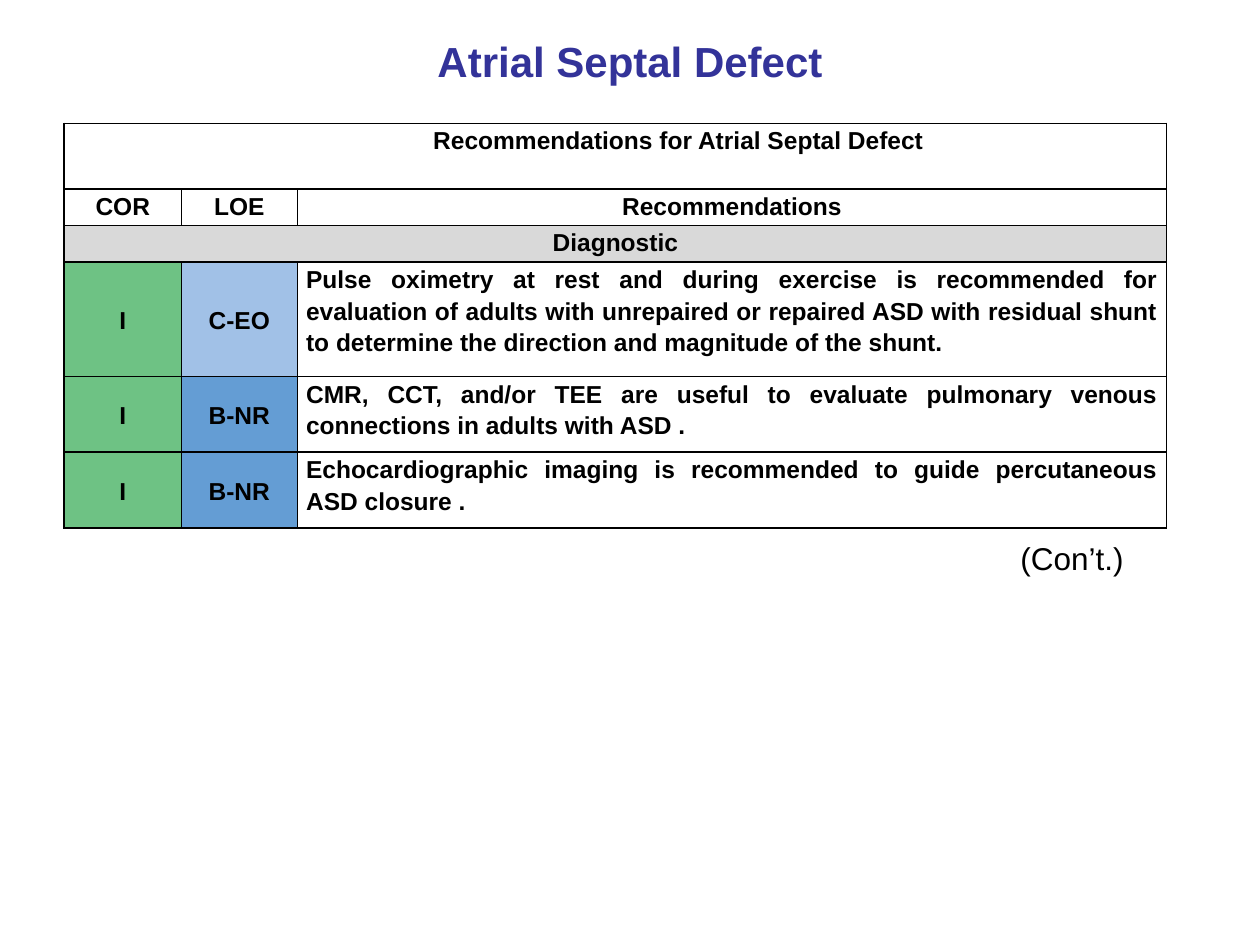
"""Build the atrial septal defect recommendations slide."""
from lxml import etree
from pptx import Presentation
from pptx import util as u
from pptx.dml.color import RGBColor
from pptx.enum import text
from pptx.oxml import ns

HUES = {"title": "333399", "ink": "000000", "band": "D9D9D9",
        "I": "6EC284", "C-EO": "A1C1E7", "B-NR": "649DD4"}
TITLE = "Atrial Septal Defect"
NOTE = "(Con’t.)"
ROWS = [
    ["Recommendations for Atrial Septal Defect"],
    ["COR", "LOE", "Recommendations"],
    ["Diagnostic"],
    ["I", "C-EO", "Pulse oximetry at rest and during exercise is recommended "
     "for evaluation of adults with unrepaired or repaired ASD with residual "
     "shunt to determine the direction and magnitude of the shunt."],
    ["I", "B-NR", "CMR, CCT, and/or TEE are useful to evaluate pulmonary "
     "venous connections in adults with ASD ."],
    ["I", "B-NR", "Echocardiographic imaging is recommended to guide "
     "percutaneous ASD closure ."],
]
WIDTHS = [0.93, 0.92, 6.9]
HEIGHTS = [0.52, 0.29, 0.29, 0.91, 0.6, 0.6]
HEAD, BAND, BODY = 0, 2, 3
PAD, INDENT = 0.07, 1.07
ALIGN = text.PP_ALIGN


def write(frame, words, size, hue="ink", bold=False, align=ALIGN.LEFT, gap=1):
    par = frame.paragraphs[0]
    par.alignment, par.line_spacing = align, gap
    run = par.add_run()
    run.text = words
    looks = {"name": "Arial", "size": u.Pt(size), "bold": bold}
    for key, value in looks.items():
        setattr(run.font, key, value)
    run.font.color.rgb = RGBColor.from_string(HUES[hue])


def edge(cell):
    props = cell._tc.get_or_add_tcPr()
    for side in ("lnL", "lnR", "lnT", "lnB"):
        line = etree.SubElement(props, ns.qn(f"a:{side}"), w=str(u.Pt(1)))
        fill = etree.SubElement(line, ns.qn("a:solidFill"))
        etree.SubElement(fill, ns.qn("a:srgbClr"), val=HUES["ink"])


def paint(cell, hue):
    if hue:
        cell.fill.solid()
        cell.fill.fore_color.rgb = RGBColor.from_string(HUES[hue])
    else:
        cell.fill.background()


def add_grid(slide):
    box = [u.Inches(n) for n in (0.51, 0.98, sum(WIDTHS), sum(HEIGHTS))]
    grid = slide.shapes.add_table(len(ROWS), len(WIDTHS), *box).table
    grid.first_row = grid.horz_banding = False
    for col, width in zip(grid.columns, WIDTHS):
        col.width = u.Inches(width)
    for row, height in zip(grid.rows, HEIGHTS):
        row.height = u.Inches(height)
    for r, words in enumerate(ROWS):
        if len(words) == 1:
            grid.cell(r, 0).merge(grid.cell(r, len(WIDTHS) - 1))
        for c in range(len(WIDTHS)):
            cell = grid.cell(r, c)
            left = INDENT if (r, c) == (HEAD, 0) else PAD
            cell.margin_left, cell.margin_right = u.Inches(left), u.Inches(PAD)
            cell.margin_top = cell.margin_bottom = 0
            label = r >= BODY and c < 2
            edge(cell)
            paint(cell, words[c] if label else "band" if r == BAND else None)
            cell.vertical_anchor = (text.MSO_ANCHOR.MIDDLE if label
                                    else text.MSO_ANCHOR.TOP)
            if c < len(words):
                align = ALIGN.JUSTIFY if r >= BODY and c == 2 else ALIGN.CENTER
                write(cell.text_frame, words[c], 14, bold=True, align=align,
                      gap=1.15)


def main():
    deck = Presentation()
    deck.slide_width, deck.slide_height = u.Inches(10), u.Inches(7.5)
    slide = deck.slides.add_slide(deck.slide_layouts[5])
    title = slide.shapes.title
    place = {"left": 0.5, "top": 0.23, "width": 9, "height": 0.5}
    for key, value in place.items():
        setattr(title, key, u.Inches(value))
    title.text_frame.vertical_anchor = text.MSO_ANCHOR.MIDDLE
    title.text_frame.auto_size = text.MSO_AUTO_SIZE.NONE
    write(title.text_frame, TITLE, 24, "title", True, ALIGN.CENTER)
    note = slide.shapes.add_textbox(*map(u.Inches, (8, 4.23, 1.08, 0.4)))
    note.text_frame.auto_size = text.MSO_AUTO_SIZE.SHAPE_TO_FIT_TEXT
    write(note.text_frame, NOTE, 18)
    add_grid(slide)
    deck.save("out.pptx")


if __name__ == "__main__":
    main()
